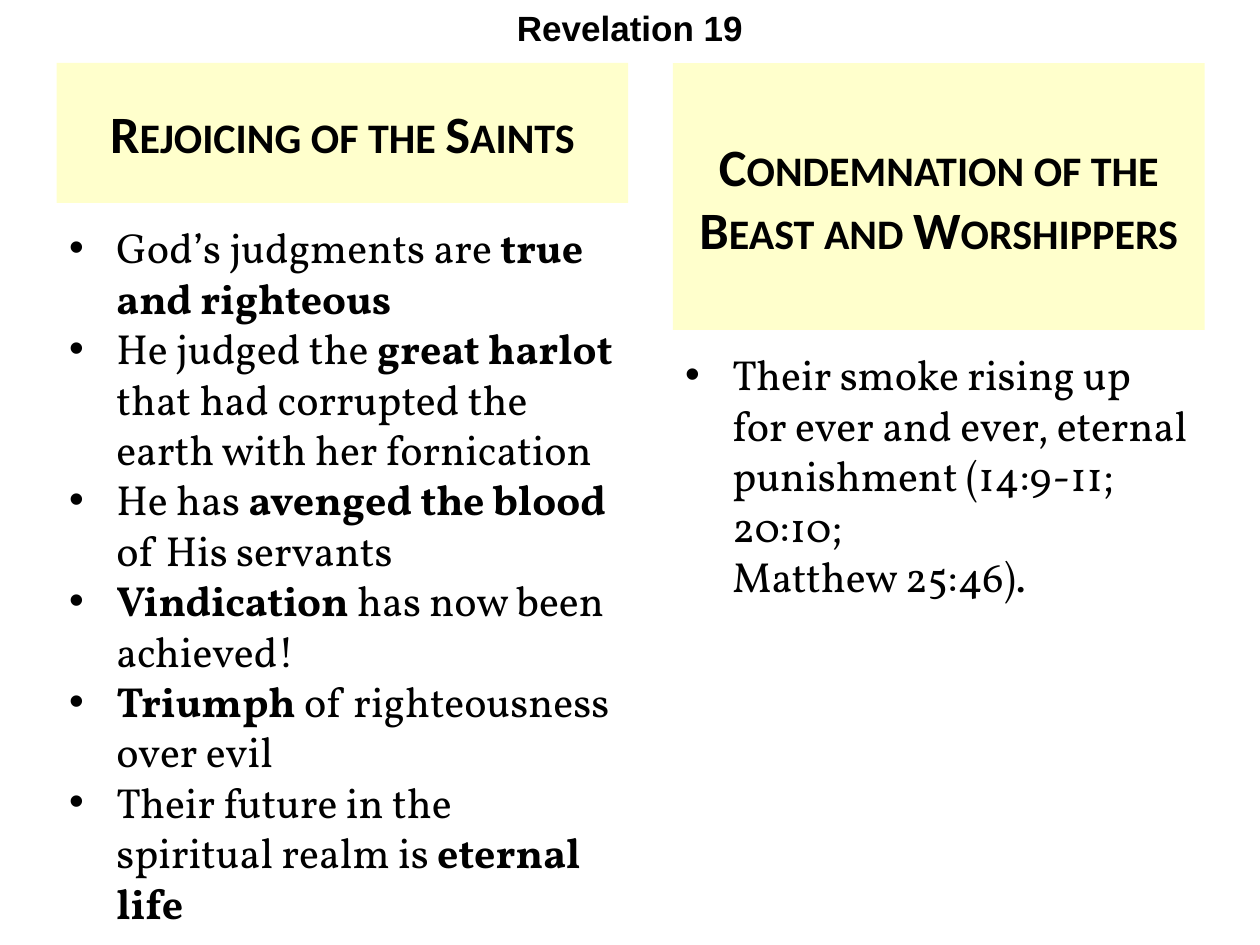
from lxml import etree
from pptx import Presentation
from pptx.dml.color import RGBColor
from pptx.enum.text import MSO_ANCHOR, PP_ALIGN
from pptx.oxml.ns import qn
from pptx.util import Pt

CENTER = PP_ALIGN.CENTER
MIDDLE = MSO_ANCHOR.MIDDLE
COLORS = {"text": "000000", "page": "FFFFFF", "heading": "FFFFCC"}
INDENT = 27
GAP = 7.2

SAINTS = [
    [("God’s judgments are ", False), ("true and righteous", True)],
    [("He judged the ", False), ("great harlot", True),
     (" that had corrupted the earth with her fornication", False)],
    [("He has ", False), ("avenged the blood ", True), ("of His servants", False)],
    [("Vindication", True), (" has now been achieved!", False)],
    [("Triumph", True), (" of righteousness over evil", False)],
    [("Their future in the spiritual realm is ", False), ("eternal life", True)],
]
BEAST = [
    [("Their smoke rising up for ever and ever, eternal punishment "
      "(14:9-11; 20:10;\nMatthew 25:46).", False)],
]


def add_box(slide, box, fill):
    """Add a filled, wrapping text box and return its text frame."""
    sp = slide.shapes.add_textbox(*(Pt(v) for v in box))
    sp.fill.solid()
    sp.fill.fore_color.rgb = RGBColor.from_string(COLORS[fill])
    tf = sp.text_frame
    tf.word_wrap = True
    return tf


def style_run(r, font, size, bold):
    """Set the font of a run."""
    r.font.name = font
    r.font.size = Pt(size)
    r.font.bold = bold
    r.font.color.rgb = RGBColor.from_string(COLORS["text"])


def add_heading(slide, box, text, font, size, fill, small_caps=False):
    """Add a centred bold heading in the given box."""
    tf = add_box(slide, box, fill)
    tf.vertical_anchor = MIDDLE
    p = tf.paragraphs[0]
    p.alignment = CENTER
    r = p.add_run()
    r.text = text
    style_run(r, font, size, True)
    if small_caps:
        r.font._element.set("cap", "small")


def add_bullets(slide, box, items):
    """Add a bulleted list whose items are lists of (text, bold) runs."""
    tf = add_box(slide, box, "page")
    for i, item in enumerate(items):
        p = tf.add_paragraph() if i else tf.paragraphs[0]
        pPr = p._p.get_or_add_pPr()
        pPr.set("marL", str(Pt(INDENT)))
        pPr.set("indent", str(-Pt(INDENT)))
        etree.SubElement(pPr, qn("a:buFont")).set("typeface", "Arial")
        etree.SubElement(pPr, qn("a:buChar")).set("char", "•")
        for text, bold in item:
            for j, line in enumerate(text.split("\n")):
                if j:
                    p.add_line_break()
                r = p.add_run()
                r.text = line
                style_run(r, "Vollkorn", 24, bold)


def add_column(slide, box, heading, heading_height, items):
    """Add a heading with its bulleted list underneath."""
    left, top, width, height = box
    add_heading(slide, (left, top, width, heading_height), heading,
                "Calibri", 30, "heading", small_caps=True)
    offset = heading_height + GAP
    add_bullets(slide, (left, top + offset, width, height - offset), items)


def main():
    """Build and save the slide."""
    prs = Presentation()
    prs.slide_width, prs.slide_height = Pt(720), Pt(540)
    slide = prs.slides.add_slide(prs.slide_layouts[6])
    add_heading(slide, (0, 0, 720, 31.5), "Revelation 19", "Arial", 20, "page")
    add_column(slide, (32.4, 36, 326.6, 502), "Rejoicing of the Saints", 80, SAINTS)
    add_column(slide, (384.5, 36, 304, 312.5),
               "Condemnation of the Beast and Worshippers", 152.6, BEAST)
    prs.save("out.pptx")


if __name__ == "__main__":
    main()
